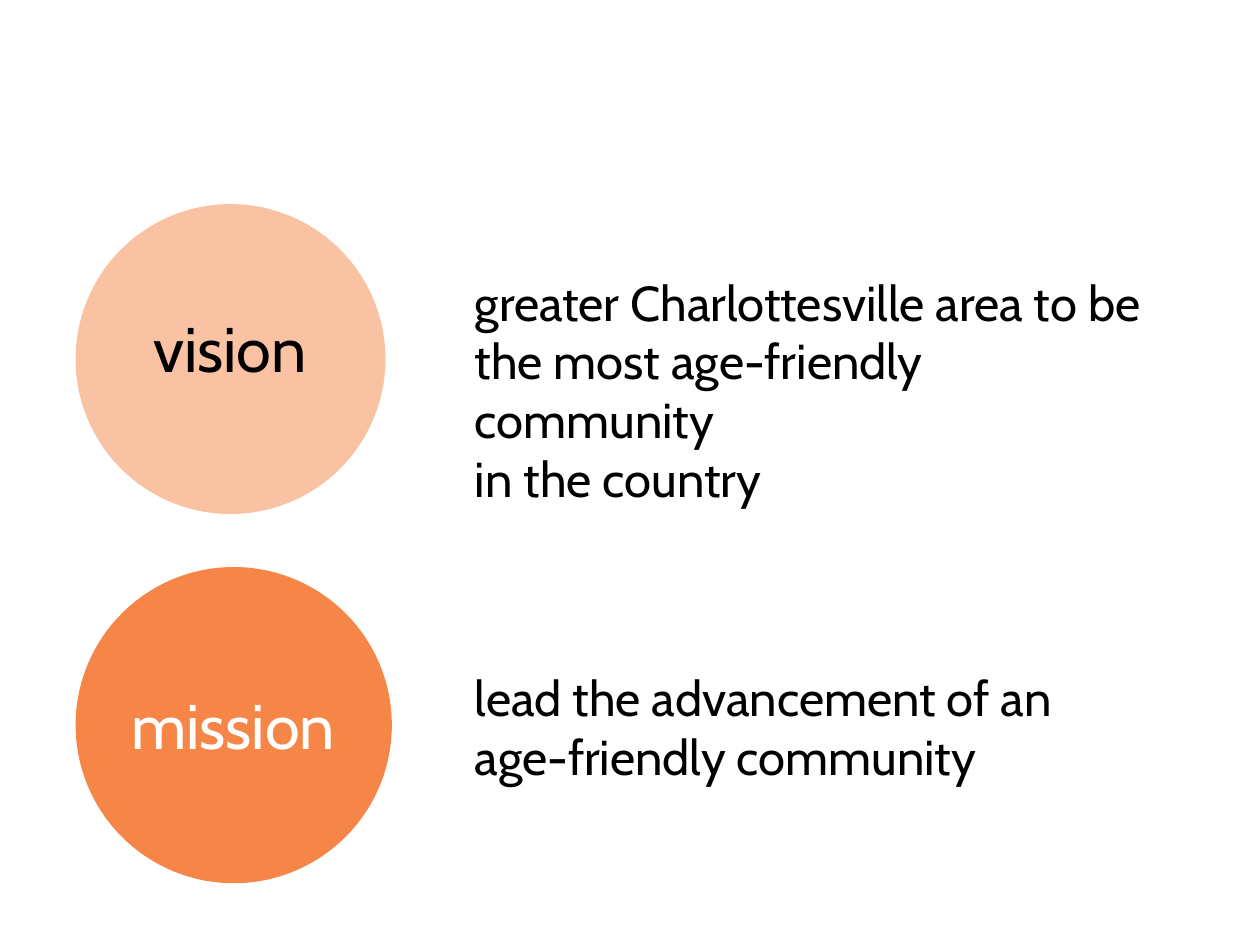
import pptx
import pptx.util
import pptx.dml.color
import pptx.enum.shapes
import pptx.enum.text
import pptx.oxml.ns
from lxml import etree
from pptx.util import Inches

FONT = "Cabin"
COLORS = {"orange": "F58647", "black": "000000", "white": "FFFFFF"}


def rgb(name):
    return pptx.dml.color.RGBColor.from_string(COLORS[name])


def add_text(slide, box, lines, size, color, align):
    """Place one paragraph, with a line break between its lines."""
    text_box = slide.shapes.add_textbox(*map(Inches, box))
    frame = text_box.text_frame
    frame.word_wrap = True
    paragraph = frame.paragraphs[0]
    paragraph.alignment = align
    for index, line in enumerate(lines):
        if index:
            paragraph.add_line_break()
        run = paragraph.add_run()
        run.text = line
        run.font.name = FONT
        run.font.size = pptx.util.Pt(size)
        run.font.color.rgb = rgb(color)


def add_circle(slide, left, top, diameter, opacity):
    circle = slide.shapes.add_shape(
        pptx.enum.shapes.MSO_SHAPE.OVAL,
        Inches(left), Inches(top), Inches(diameter), Inches(diameter))
    circle.shadow.inherit = False
    circle.line.fill.background()
    circle.fill.solid()
    circle.fill.fore_color.rgb = rgb("orange")
    if opacity < 100:
        qn = pptx.oxml.ns.qn
        fill_color = circle.fill._xPr.find(qn("a:solidFill")).find(qn("a:srgbClr"))
        etree.SubElement(fill_color, qn("a:alpha"), val=str(opacity * 1000))


def add_statement(slide, circle, opacity, label, label_box, label_color,
                  lines, statement_box):
    """One row: a labelled circle with its statement on the right."""
    align = pptx.enum.text.PP_ALIGN
    add_circle(slide, *circle, opacity)
    add_text(slide, label_box, [label], 36, label_color, align.CENTER)
    add_text(slide, statement_box, lines, 28, "black", align.LEFT)


def main():
    deck = pptx.Presentation()
    deck.slide_width, deck.slide_height = Inches(10), Inches(7.5)
    slide = deck.slides.add_slide(deck.slide_layouts[6])
    circle_left, statement_left = 0.6, 3.67

    # Vision
    add_statement(
        slide, (circle_left, 1.62, 2.46), 50,
        "vision", (1.04, 2.41, 1.57, 0.71), "black",
        ["greater Charlottesville area to be the most age-friendly community ",
         "in the country"],
        (statement_left, 2.11, 5.67, 1.51))

    # Mission
    add_statement(
        slide, (circle_left, 4.5, 2.51), 100,
        "mission", (0.81, 5.4, 2.08, 0.71), "white",
        ["lead the advancement of an age-friendly community"],
        (statement_left, 5.25, 4.95, 1.04))

    deck.save("out.pptx")


if __name__ == "__main__":
    main()
